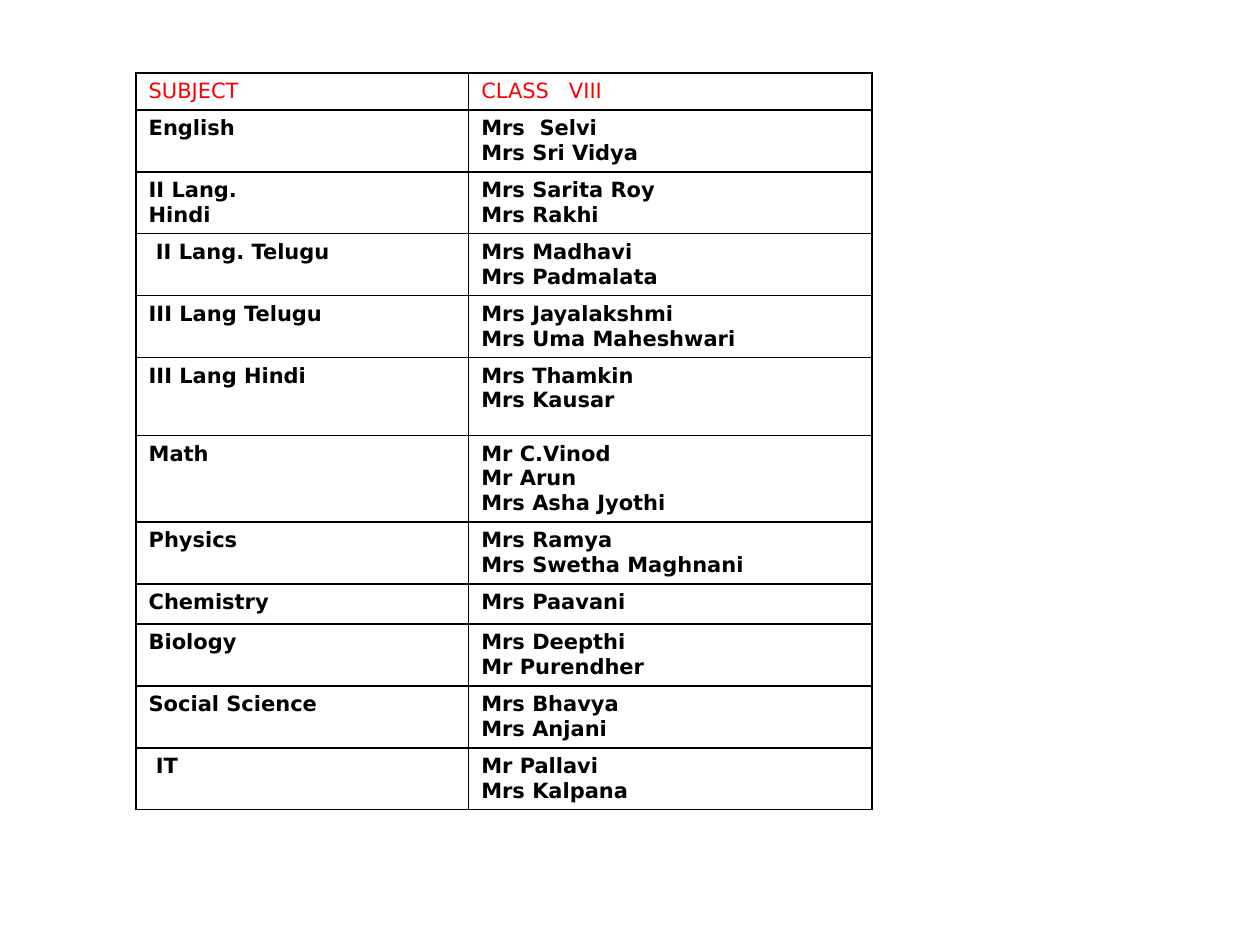
"""Build a slide listing the Class VIII teachers by subject."""
from dataclasses import dataclass

from lxml import etree
from pptx import Presentation
from pptx import util as u
from pptx.dml.color import RGBColor
from pptx.oxml import ns


@dataclass(frozen=True)
class Theme:
    """Colours, type and line sizes of the slide."""
    font: str = "DejaVu Sans"
    size: float = 12
    heading: str = "FF0000"
    body: str = "000000"
    rule: str = "000000"
    rule_width: float = 1


THEME = Theme()
SLIDE_WIDTH, SLIDE_HEIGHT = u.Inches(10), u.Inches(7.5)
LEFT, TOP = 0.108, 0.077
COLUMN_SHARES = (0.264, 0.32)
LINE_HEIGHT, CELL_PADDING = u.Inches(0.19), u.Inches(0.1)
TALL_ROWS = {"III Lang Hindi": u.Inches(0.62), "Chemistry": u.Inches(0.32)}

HEADINGS = ("SUBJECT", "CLASS   VIII")
STAFF = (
    ("English", "Mrs  Selvi\nMrs Sri Vidya"),
    ("II Lang.\nHindi", "Mrs Sarita Roy\nMrs Rakhi"),
    (" II Lang. Telugu", "Mrs Madhavi\nMrs Padmalata"),
    ("III Lang Telugu", "Mrs Jayalakshmi\nMrs Uma Maheshwari"),
    ("III Lang Hindi", "Mrs Thamkin\nMrs Kausar"),
    ("Math", "Mr C.Vinod\nMr Arun\nMrs Asha Jyothi"),
    ("Physics", "Mrs Ramya\nMrs Swetha Maghnani"),
    ("Chemistry", "Mrs Paavani"),
    ("Biology", "Mrs Deepthi\nMr Purendher"),
    ("Social Science", "Mrs Bhavya\nMrs Anjani"),
    (" IT", "Mr Pallavi\nMrs Kalpana"),
)


def row_height(subject, teachers):
    """Return the height that fits the lines of a row."""
    lines = max(entry.count("\n") + 1 for entry in (subject, teachers))
    return TALL_ROWS.get(subject, lines * LINE_HEIGHT + CELL_PADDING)


def draw_borders(cell):
    """Rule all four sides of a cell."""
    properties = cell._tc.get_or_add_tcPr()
    for side in ("lnL", "lnR", "lnT", "lnB"):
        line = etree.SubElement(properties, ns.qn(f"a:{side}"),
                                w=str(u.Pt(THEME.rule_width)))
        fill = etree.SubElement(line, ns.qn("a:solidFill"))
        etree.SubElement(fill, ns.qn("a:srgbClr"), val=THEME.rule)


def write_cell(cell, entry, colour, bold):
    """Write one paragraph for each line of an entry."""
    frame = cell.text_frame
    for index, line in enumerate(entry.split("\n")):
        paragraph = frame.add_paragraph() if index else frame.paragraphs[0]
        run = paragraph.add_run()
        run.text = line
        run.font.name = THEME.font
        run.font.size = u.Pt(THEME.size)
        run.font.bold = bold
        run.font.color.rgb = RGBColor.from_string(colour)


def add_staff_table(slide):
    """Add the table of subjects and teachers."""
    entries = (HEADINGS, *STAFF)
    heights = [row_height(*pair) for pair in entries]
    widths = [int(SLIDE_WIDTH * share) for share in COLUMN_SHARES]
    table = slide.shapes.add_table(
        len(entries), len(widths), int(SLIDE_WIDTH * LEFT),
        int(SLIDE_HEIGHT * TOP), sum(widths), sum(heights)).table
    table.first_row = table.horz_banding = False
    for column, width in zip(table.columns, widths):
        column.width = width
    for row, height, pair in zip(table.rows, heights, entries):
        row.height = height
        is_heading = pair is HEADINGS
        colour = THEME.heading if is_heading else THEME.body
        for cell, entry in zip(row.cells, pair):
            draw_borders(cell)
            cell.fill.background()
            write_cell(cell, entry, colour, not is_heading)


def main():
    """Build and save the presentation."""
    deck = Presentation()
    deck.slide_width, deck.slide_height = SLIDE_WIDTH, SLIDE_HEIGHT
    slide = deck.slides.add_slide(deck.slide_layouts[6])
    add_staff_table(slide)
    deck.save("out.pptx")


if __name__ == "__main__":
    main()
